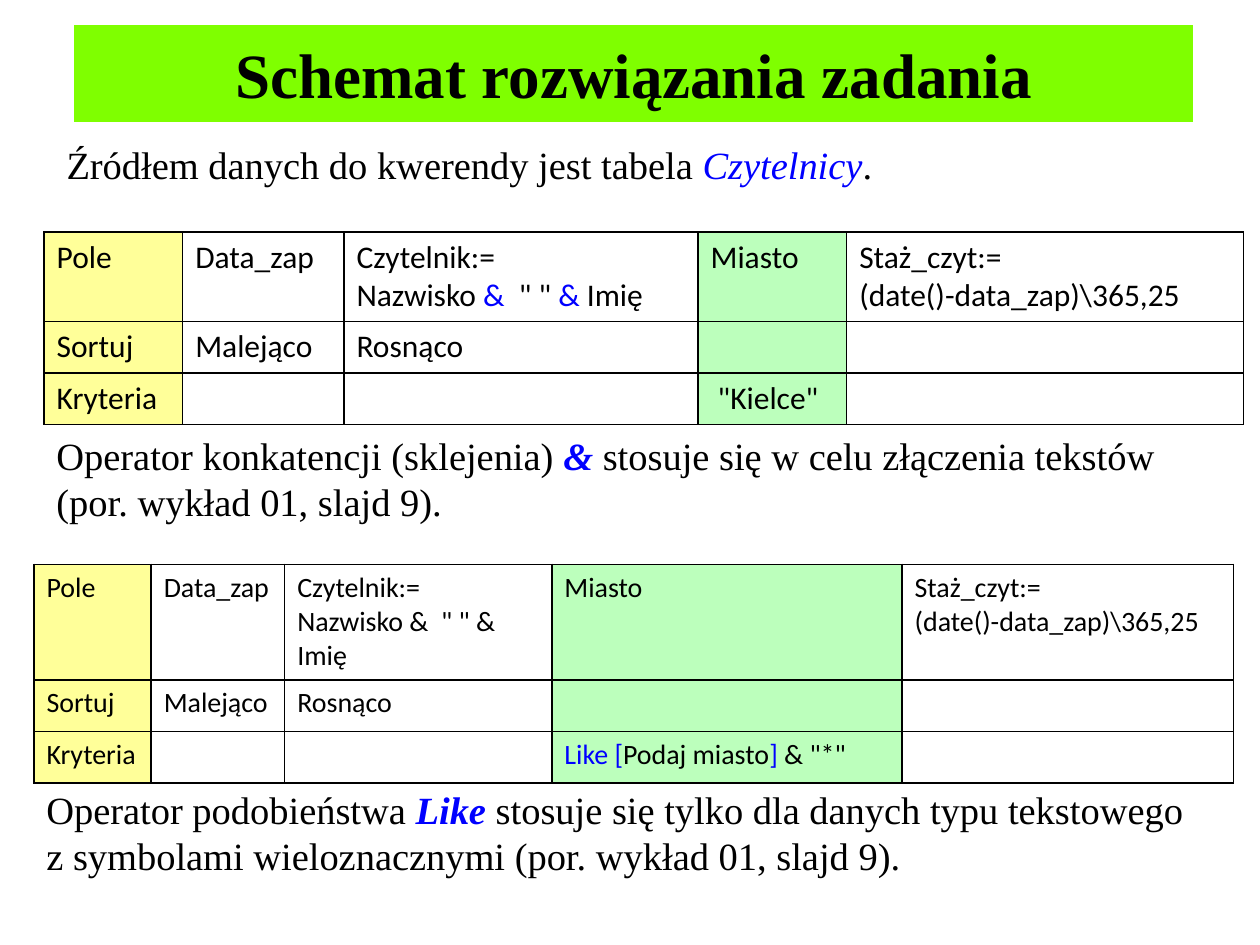
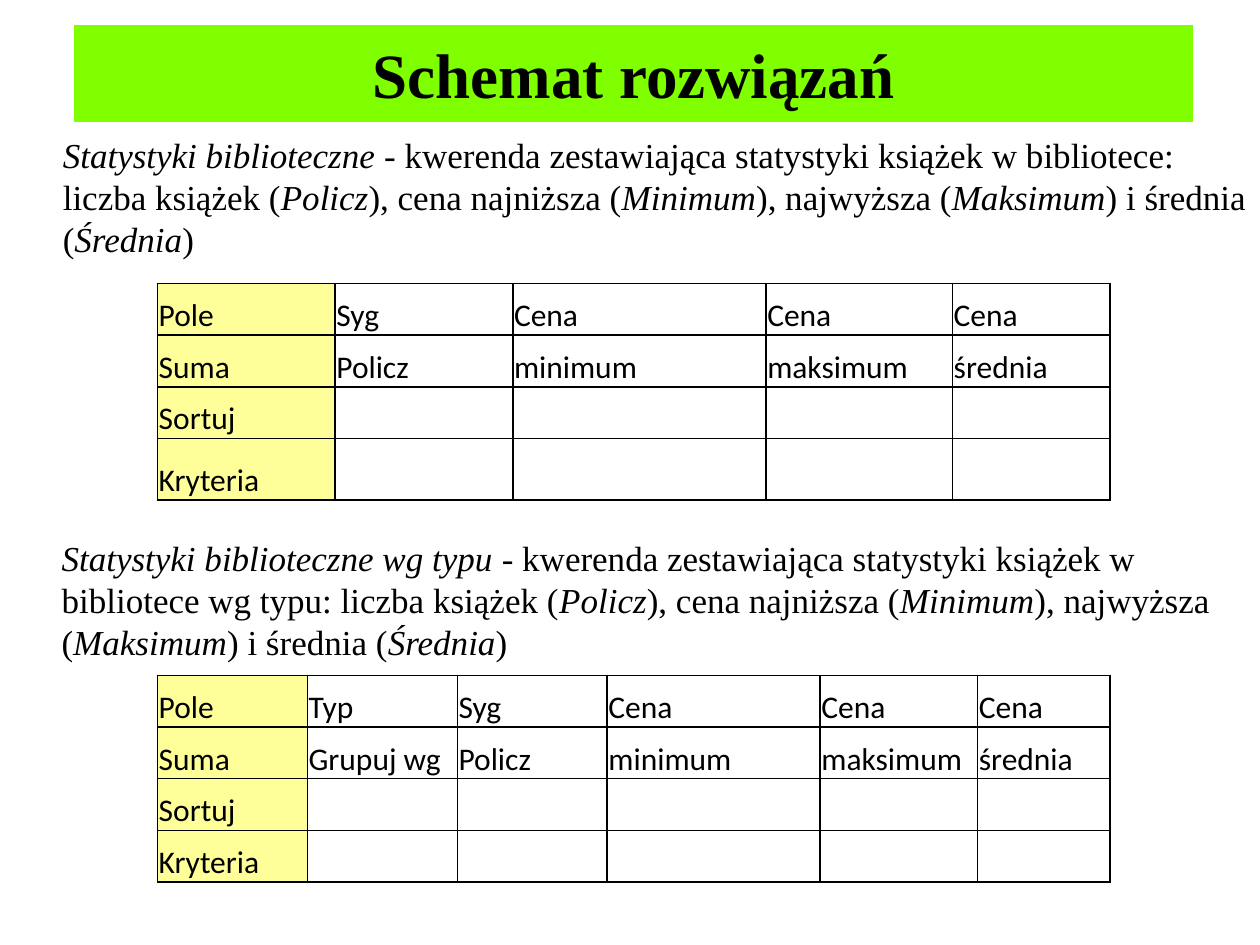
"""Build two slides that show library query designs as grids."""
from dataclasses import dataclass

from lxml.etree import SubElement
from pptx import Presentation
from pptx.dml.color import RGBColor
from pptx.enum.shapes import MSO_SHAPE as Shape
from pptx.enum.text import MSO_ANCHOR as Anchor, PP_ALIGN as Align
from pptx.oxml.ns import qn
from pptx.slide import Slide
from pptx.text.text import TextFrame
from pptx.util import Inches, Pt

COLORS = {
    "text": "000000",
    "border": "000000",
    "emphasis": "0000FF",
    "band": "7FFF00",
    "band_line": "FFFFFF",
    "label": "FFFF99",
    "criterion": "BCFFBC",
}
SERIF = "Times New Roman"
SANS = "Calibri"
MARK = "|"


@dataclass(frozen=True)
class Emphasis:
    """Style of the text between two marks."""
    color: str = "text"
    bold: bool = False
    italic: bool = False


@dataclass(frozen=True)
class Margins:
    """Cell margins in inches, with the vertical anchor."""
    left: float
    top: float
    right: float
    bottom: float
    anchor: Anchor


@dataclass(frozen=True)
class Note:
    """Paragraphs of explanation placed on a slide."""
    left: float
    top: float
    width: float
    height: float
    text: str
    size: int
    emphasis: Emphasis


@dataclass(frozen=True)
class Grid:
    """Query design grid whose first column holds labels."""
    left: float
    top: float
    columns: list[float]
    heights: list[float]
    rows: list[list[str]]
    margins: Margins
    size: int = 18
    criterion_column: int | None = None


@dataclass(frozen=True)
class Page:
    """One slide: title, notes and grids."""
    title: str
    grids: list[Grid]
    notes: list[Note]


BLUE = Emphasis("emphasis")
BLUE_ITALIC = Emphasis("emphasis", italic=True)
BLUE_STRONG = Emphasis("emphasis", bold=True, italic=True)
ITALIC = Emphasis(italic=True)
ROOMY = Margins(0.1, 0.05, 0.1, 0.05, Anchor.TOP)
TIGHT = Margins(0.01, 0.01, 0.01, 0, Anchor.BOTTOM)

ROW = 0.41
SORT_ROW = ["Sortuj", "Malejąco", "Rosnąco"]
TENURE = "Staż_czyt:=\n(date()-data_zap)\\365,25"
PRICE_FIELDS = ["Syg", "Cena", "Cena", "Cena"]
PRICE_TOTALS = ["Policz", "minimum", "maksimum", "średnia"]
MEASURES = ("liczba książek (|Policz|), cena najniższa (|Minimum|), "
            "najwyższa (|Maksimum|) i średnia (|Średnia|)")

PAGES = [
    Page(
        "Schemat rozwiązania zadania",
        [
            Grid(0.35, 1.84, [1.1, 1.28, 2.81, 1.18, 3.15], [0.71, ROW, ROW],
                 [["Pole", "Data_zap", 'Czytelnik:=\nNazwisko |&|  " " |&| Imię',
                   "Miasto", TENURE],
                  SORT_ROW,
                  ["Kryteria", "", "", ' "Kielce"']],
                 ROOMY, criterion_column=3),
            Grid(0.27, 4.48, [0.93, 1.06, 2.12, 2.78, 2.63], [0.91, ROW, ROW],
                 [["Pole", "Data_zap", 'Czytelnik:=\nNazwisko &  " " & Imię',
                   "Miasto", TENURE],
                  SORT_ROW,
                  ["Kryteria", "", "", '|Like [|Podaj miasto|]| & "*"']],
                 ROOMY, size=16, criterion_column=3),
        ],
        [
            Note(0.27, 6.19, 9.37, 0.84,
                 "Operator podobieństwa |Like| stosuje się tylko dla danych typu "
                 "tekstowego z symbolami wieloznacznymi (por. wykład 01, slajd 9).",
                 22, BLUE_STRONG),
            Note(0.35, 3.38, 9.37, 0.84,
                 "Operator konkatencji (sklejenia) |& |stosuje się w celu "
                 "złączenia tekstów (por. wykład 01, slajd 9).",
                 22, BLUE_STRONG),
            Note(0.43, 1.07, 9.06, 0.47,
                 "Źródłem danych do kwerendy jest tabela |Czytelnicy|.",
                 22, BLUE_ITALIC),
        ],
    ),
    Page(
        "Schemat rozwiązań",
        [
            Grid(1.25, 2.25, [1.41, 1.41, 2.01, 1.48, 1.25],
                 [ROW, ROW, ROW, 0.49],
                 [["Pole", *PRICE_FIELDS], ["Suma", *PRICE_TOTALS],
                  ["Sortuj"], ["Kryteria"]],
                 TIGHT),
            Grid(1.25, 5.36, [1.19, 1.19, 1.19, 1.69, 1.25, 1.05], [ROW] * 4,
                 [["Pole", "Typ", *PRICE_FIELDS],
                  ["Suma", "Grupuj wg", *PRICE_TOTALS],
                  ["Sortuj"], ["Kryteria"]],
                 TIGHT),
        ],
        [
            Note(0.4, 1.01, 9.61, 1.11,
                 "|Statystyki biblioteczne |- kwerenda zestawiająca statystyki "
                 "książek w bibliotece:\n" + MEASURES, 20, ITALIC),
            Note(0.39, 4.21, 9.61, 1.11,
                 "|Statystyki biblioteczne wg typu |- kwerenda zestawiająca "
                 "statystyki książek w bibliotece wg typu: " + MEASURES,
                 20, ITALIC),
        ],
    ),
]


def color(name: str) -> RGBColor:
    """Return the named colour."""
    return RGBColor.from_string(COLORS[name])


def write_text(frame: TextFrame, text: str, font_name: str, size: int,
               emphasis: Emphasis) -> None:
    """Write lines as paragraphs, styling the text between marks."""
    for index, line in enumerate(text.split("\n")):
        paragraph = frame.add_paragraph() if index else frame.paragraphs[0]
        paragraph.font.name = font_name
        paragraph.font.size = Pt(size)
        paragraph.font.color.rgb = color("text")
        for position, part in enumerate(line.split(MARK)):
            if not part:
                continue
            run = paragraph.add_run()
            run.text = part
            if position % 2:
                run.font.color.rgb = color(emphasis.color)
                run.font.bold = emphasis.bold
                run.font.italic = emphasis.italic


def add_title(slide: Slide, title: str) -> None:
    """Draw the green title band."""
    band = slide.shapes.add_shape(Shape.RECTANGLE, Inches(0.56), Inches(0.17),
                                  Inches(8.94), Inches(0.83))
    band.shadow.inherit = False
    band.fill.solid()
    band.fill.fore_color.rgb = color("band")
    band.line.color.rgb = color("band_line")
    band.line.width = Pt(4)
    frame = band.text_frame
    frame.vertical_anchor = Anchor.MIDDLE
    write_text(frame, title, SERIF, 36, Emphasis())
    frame.paragraphs[0].alignment = Align.CENTER
    frame.paragraphs[0].font.bold = True


def add_note(slide: Slide, note: Note) -> None:
    """Draw one explanation."""
    box = slide.shapes.add_textbox(Inches(note.left), Inches(note.top),
                                   Inches(note.width), Inches(note.height))
    box.text_frame.word_wrap = True
    write_text(box.text_frame, note.text, SERIF, note.size, note.emphasis)


def add_borders(cell) -> None:
    """Put a thin solid line on each side of a cell."""
    properties = cell._tc.get_or_add_tcPr()
    for side in ("a:lnL", "a:lnR", "a:lnT", "a:lnB"):
        line = SubElement(properties, qn(side), w=str(Pt(1)))
        fill = SubElement(line, qn("a:solidFill"))
        SubElement(fill, qn("a:srgbClr"), val=COLORS["border"])


def add_grid(slide: Slide, grid: Grid) -> None:
    """Draw one query design grid as a table."""
    table = slide.shapes.add_table(
        len(grid.heights), len(grid.columns), Inches(grid.left), Inches(grid.top),
        Inches(sum(grid.columns)), Inches(sum(grid.heights))).table
    table.first_row = False
    table.horz_banding = False
    for column, width in zip(table.columns, grid.columns):
        column.width = Inches(width)
    fills = {0: "label", grid.criterion_column: "criterion"}
    margins = grid.margins
    for row, height, texts in zip(table.rows, grid.heights, grid.rows):
        row.height = Inches(height)
        for index, cell in enumerate(row.cells):
            cell.margin_left = Inches(margins.left)
            cell.margin_top = Inches(margins.top)
            cell.margin_right = Inches(margins.right)
            cell.margin_bottom = Inches(margins.bottom)
            cell.vertical_anchor = margins.anchor
            add_borders(cell)
            if index in fills:
                cell.fill.solid()
                cell.fill.fore_color.rgb = color(fills[index])
            else:
                cell.fill.background()
            if index < len(texts):
                write_text(cell.text_frame, texts[index], SANS, grid.size, BLUE)


def main() -> None:
    """Build and save the presentation."""
    presentation = Presentation()
    presentation.slide_width = Inches(10)
    presentation.slide_height = Inches(7.5)
    for page in PAGES:
        slide = presentation.slides.add_slide(presentation.slide_layouts[6])
        add_title(slide, page.title)
        for grid in page.grids:
            add_grid(slide, grid)
        for note in page.notes:
            add_note(slide, note)
    presentation.save("out.pptx")


if __name__ == "__main__":
    main()
